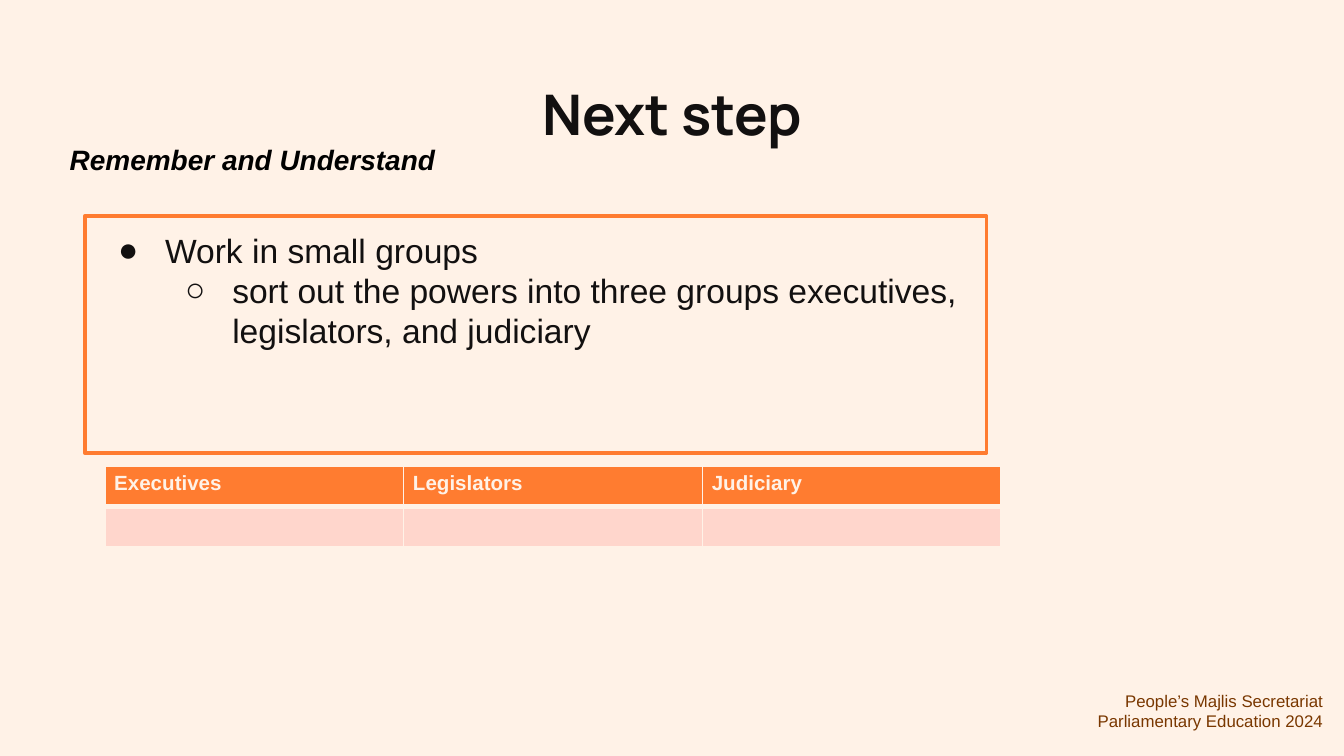
"""Build the "Next step" group-work slide."""
import dataclasses
import typing

import pptx
import pptx.dml.color
import pptx.enum.shapes
import pptx.enum.text
import pptx.oxml
import pptx.oxml.ns
import pptx.util

Inches = pptx.util.Inches
Align = pptx.enum.text.PP_ALIGN


@dataclasses.dataclass(frozen=True)
class Theme:
    """Colours, fonts and type sizes."""
    cream: str = "FFF2E7"
    orange: str = "FF7C30"
    pink: str = "FFD6CC"
    ink: str = "121010"
    black: str = "000000"
    brown: str = "793700"
    head_font: str = "Manrope"
    body_font: str = "Arial"
    title: float = 30
    body: float = 18
    label: float = 15
    cell: float = 11
    footer: float = 9


@dataclasses.dataclass(frozen=True)
class Box:
    """Position and size in inches."""
    x: float
    y: float
    w: float
    h: float

    def emu(self) -> list[int]:
        """Return the four lengths in EMU."""
        return [Inches(v) for v in (self.x, self.y, self.w, self.h)]


@dataclasses.dataclass(frozen=True)
class Bullet:
    """One bulleted line of the task."""
    text: str
    char: str
    level: int


THEME = Theme()
TASK = [
    Bullet("Work in small groups", "●", 0),
    Bullet("sort out the powers into three groups executives, "
           "legislators, and judiciary", "○", 1),
]
BRANCHES = ["Executives", "Legislators", "Judiciary"]
FOOTER = ["People’s Majlis Secretariat", "Parliamentary Education 2024"]


def rgb(color: str) -> pptx.dml.color.RGBColor:
    """Turn a hex string into a colour."""
    return pptx.dml.color.RGBColor.from_string(color)


def write(p: typing.Any, text: str, *, size: float, color: str,
          font: str = THEME.body_font, bold: bool = False,
          italic: bool = False, align: Align = Align.LEFT) -> None:
    """Write one formatted run into a paragraph."""
    p.alignment = align
    r = p.add_run()
    r.text = text
    f = r.font
    f.name, f.size, f.bold, f.italic = font, pptx.util.Pt(size), bold, italic
    f.color.rgb = rgb(color)


def frame(sp: typing.Any, pad: float) -> typing.Any:
    """Set wrapping, top anchor and vertical padding of a shape's text."""
    tf = sp.text_frame
    tf.word_wrap = True
    tf.auto_size = pptx.enum.text.MSO_AUTO_SIZE.NONE
    tf.vertical_anchor = pptx.enum.text.MSO_ANCHOR.TOP
    tf.margin_left = tf.margin_right = Inches(0.1)
    tf.margin_top = tf.margin_bottom = Inches(pad)
    return tf


def paragraphs(tf: typing.Any, count: int) -> list[typing.Any]:
    """Return the given number of paragraphs in a fresh text frame."""
    return [tf.paragraphs[0]] + [tf.add_paragraph() for _ in range(count - 1)]


def add_text(s: typing.Any, box: Box, lines: list[str], **fmt: typing.Any) -> None:
    """Add a text box with one paragraph a line."""
    tf = frame(s.shapes.add_textbox(*box.emu()), 0.05)
    for p, line in zip(paragraphs(tf, len(lines)), lines):
        write(p, line, **fmt)


def set_title(s: typing.Any, box: Box, text: str) -> None:
    """Place and fill the title placeholder."""
    sp = s.shapes.title
    sp.left, sp.top, sp.width, sp.height = box.emu()
    write(frame(sp, 0.1).paragraphs[0], text, size=THEME.title, color=THEME.ink,
          font=THEME.head_font, bold=True, align=Align.CENTER)


def xml(tag: str, body: str = "", **attrs: typing.Any) -> typing.Any:
    """Make a DrawingML element."""
    text = "".join(f' {k}="{v}"' for k, v in attrs.items())
    ns = pptx.oxml.ns.nsdecls("a")
    return pptx.oxml.parse_xml(f"<a:{tag} {ns}{text}>{body}</a:{tag}>")


def add_task(s: typing.Any, box: Box, bullets: list[Bullet]) -> None:
    """Add the outlined box with its bullets."""
    sp = s.shapes.add_shape(pptx.enum.shapes.MSO_SHAPE.RECTANGLE, *box.emu())
    sp.shadow.inherit = False
    sp.fill.solid()
    sp.fill.fore_color.rgb = rgb(THEME.cream)
    sp.line.color.rgb = rgb(THEME.orange)
    sp.line.width = pptx.util.Pt(2)
    for p, b in zip(paragraphs(frame(sp, 0.1), len(bullets)), bullets):
        write(p, b.text, size=THEME.body, color=THEME.ink)
        p.level = b.level
        ppr = p._p.get_or_add_pPr()
        ppr.set("marL", str(Inches(0.5 * (b.level + 1))))
        ppr.set("indent", str(Inches(-0.35)))
        ppr.append(xml("buClr", f'<a:srgbClr val="{THEME.ink}"/>'))
        ppr.append(xml("buFont", typeface=THEME.body_font))
        ppr.append(xml("buChar", char=b.char))


def style_cell(cell: typing.Any, fill: str, top: float, bottom: float) -> None:
    """Set the borders, fill and margins of a cell."""
    tcpr = cell._tc.get_or_add_tcPr()
    line = f'<a:solidFill><a:srgbClr val="{THEME.cream}"/></a:solidFill>'
    for side, width in {"L": 1, "R": 1, "T": top, "B": bottom}.items():
        tcpr.append(xml(f"ln{side}", line, w=pptx.util.Pt(width)))
    cell.fill.solid()
    cell.fill.fore_color.rgb = rgb(fill)
    cell.margin_left = cell.margin_right = Inches(0.07)
    cell.margin_top = cell.margin_bottom = Inches(0.04)


def add_branches(s: typing.Any, box: Box, heads: list[str]) -> None:
    """Add the sorting table with an empty row to fill in."""
    table = s.shapes.add_table(2, len(heads), *box.emu()).table
    for col, head in enumerate(heads):
        top, blank = table.cell(0, col), table.cell(1, col)
        style_cell(top, THEME.orange, 1, 3)
        style_cell(blank, THEME.pink, 3, 1)
        write(top.text_frame.paragraphs[0], head, size=THEME.cell,
              color=THEME.cream, bold=True)
        blank.text_frame.paragraphs[0]._p.append(
            xml("endParaRPr", sz=int(THEME.cell * 100)))


def main() -> None:
    """Build and save the presentation."""
    prs = pptx.Presentation()
    prs.slide_width = Inches(10)
    prs.slide_height = Inches(10 * 9 / 16)
    s = prs.slides.add_slide(prs.slide_layouts[5])
    s.background.fill.solid()
    s.background.fill.fore_color.rgb = rgb(THEME.cream)
    add_text(s, Box(6.92, 5.09, 3.02, 0.4), FOOTER, size=THEME.footer,
             color=THEME.brown, align=Align.RIGHT)
    set_title(s, Box(0.78, 0.49, 8.44, 0.63), "Next step")
    add_task(s, Box(0.63, 1.61, 6.71, 1.76), TASK)
    add_branches(s, Box(0.78, 3.47, 6.67, 0.6), BRANCHES)
    add_text(s, Box(0.42, 1.01, 2.95, 0.35), ["Remember and Understand"],
             size=THEME.label, color=THEME.black, bold=True, italic=True)
    prs.save("out.pptx")


if __name__ == "__main__":
    main()
